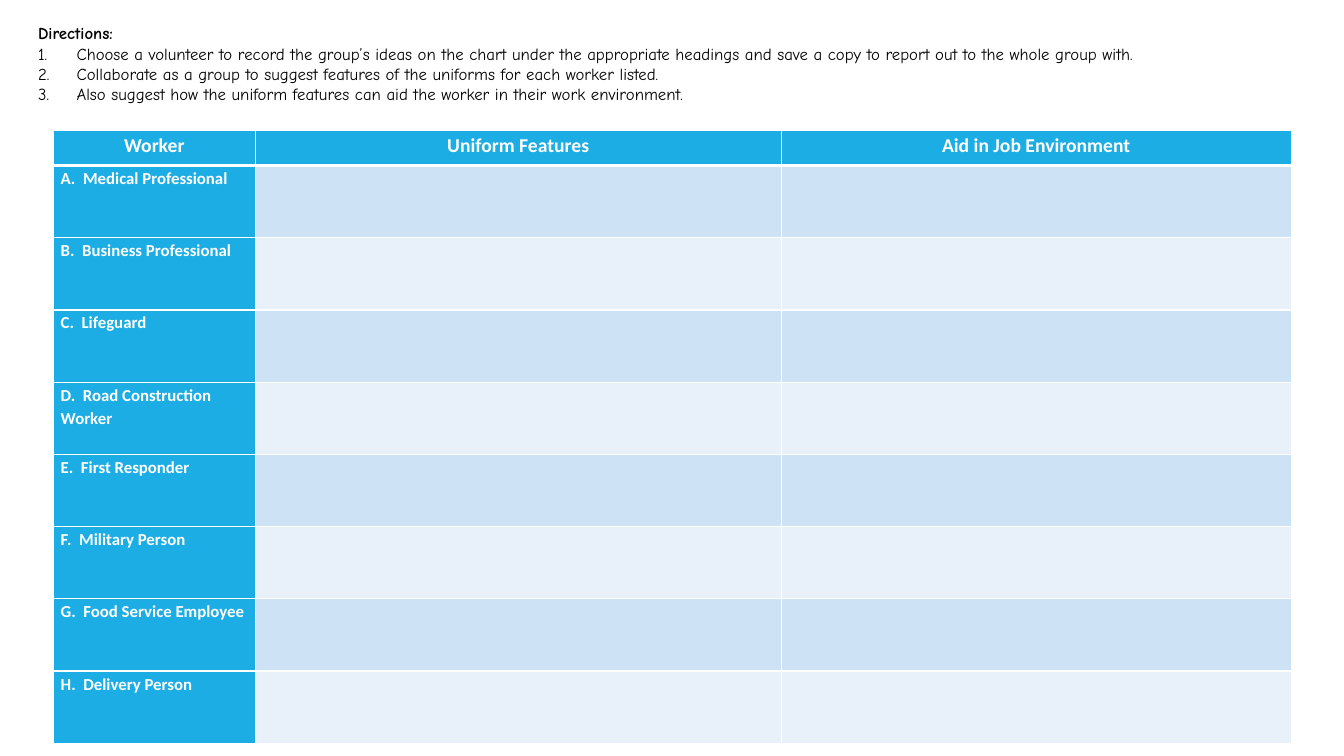
"""Build the worker uniform brainstorming slide."""
import pptx
import pptx.dml.color
import pptx.enum.text
import pptx.oxml
import pptx.oxml.ns
import pptx.util
from pptx.util import Cm

RGBColor = pptx.dml.color.RGBColor
BLACK = RGBColor(0x00, 0x00, 0x00)
WHITE = RGBColor(0xFF, 0xFF, 0xFF)
BLUE = RGBColor(0x1C, 0xAD, 0xE4)
BAND_DARK = RGBColor(0xCD, 0xE3, 0xF5)
BAND_LIGHT = RGBColor(0xE8, 0xF1, 0xFA)
NAMESPACE = pptx.oxml.ns.nsdecls("a")

HEADINGS = ["Worker", "Uniform Features", "Aid in Job Environment"]
WORKERS = [
    "Medical Professional", "Business Professional", "Lifeguard",
    "Road Construction Worker", "First Responder", "Military Person",
    "Food Service Employee", "Delivery Person",
]
STEPS = [
    "Choose a volunteer to record the group’s ideas on the chart under the "
    "appropriate headings and save a copy to report out to the whole group with.",
    "Collaborate as a group to suggest features of the uniforms for each worker listed.",
    "Also suggest how the uniform features can aid the worker in their work environment.",
]


def write(paragraph, text, font="Calibri", size=12, color=WHITE, bold=True,
          align=pptx.enum.text.PP_ALIGN.LEFT, spacing=1.15):
    paragraph.alignment = align
    paragraph.line_spacing = spacing
    run = paragraph.add_run()
    run.text = text
    run.font.name = font
    run.font.size = pptx.util.Pt(size)
    run.font.bold = bold
    run.font.color.rgb = color


def style_cell(cell, fill, top=1, bottom=1):
    cell.margin_left = cell.margin_right = Cm(0.18)
    cell.margin_top = cell.margin_bottom = 0
    properties = cell._tc.get_or_add_tcPr()
    for side, width in (("L", 1), ("R", 1), ("T", top), ("B", bottom)):
        properties.append(pptx.oxml.parse_xml(
            f'<a:ln{side} {NAMESPACE} w="{pptx.util.Pt(width)}"><a:solidFill>'
            f'<a:srgbClr val="{WHITE}"/></a:solidFill></a:ln{side}>'))
    cell.fill.solid()
    cell.fill.fore_color.rgb = fill


deck = pptx.Presentation()
deck.slide_width, deck.slide_height = Cm(33.87), Cm(19.05)
slide = deck.slides.add_slide(deck.slide_layouts[6])

directions = slide.shapes.add_textbox(Cm(0.71), Cm(0.46), Cm(31.01), Cm(2.82)).text_frame
directions.word_wrap = True
write(directions.paragraphs[0], "Directions:", font="Comic Neue", color=BLACK, spacing=1.0)
for step in STEPS:
    paragraph = directions.add_paragraph()
    write(paragraph, step, font="Comic Neue", color=BLACK, bold=False, spacing=1.0)
    numbering = paragraph._p.get_or_add_pPr()
    numbering.set("marL", str(Cm(0.97)))
    numbering.set("indent", str(-Cm(0.97)))
    numbering.append(pptx.oxml.parse_xml(f'<a:buAutoNum {NAMESPACE} type="arabicPeriod"/>'))

worksheet = slide.shapes.add_table(
    len(WORKERS) + 1, len(HEADINGS), Cm(1.35), Cm(3.28), Cm(31.19), Cm(15.45)).table
for column, width in zip(worksheet.columns, (5.08, 13.26, 12.85)):
    column.width = Cm(width)
for row in worksheet.rows:
    row.height = Cm(1.82)
worksheet.rows[0].height = Cm(0.89)

for column, heading in enumerate(HEADINGS):
    cell = worksheet.cell(0, column)
    style_cell(cell, BLUE, bottom=3)
    write(cell.text_frame.paragraphs[0], heading, size=14,
          align=pptx.enum.text.PP_ALIGN.CENTER)

for row, worker in enumerate(WORKERS, start=1):
    band = BAND_DARK if row % 2 else BAND_LIGHT
    for column, fill in enumerate((BLUE, band, band)):
        style_cell(worksheet.cell(row, column), fill, top=3 if row == 1 else 1)
    write(worksheet.cell(row, 0).text_frame.paragraphs[0], f"{'ABCDEFGH'[row - 1]}.  {worker}")

deck.save("out.pptx")
